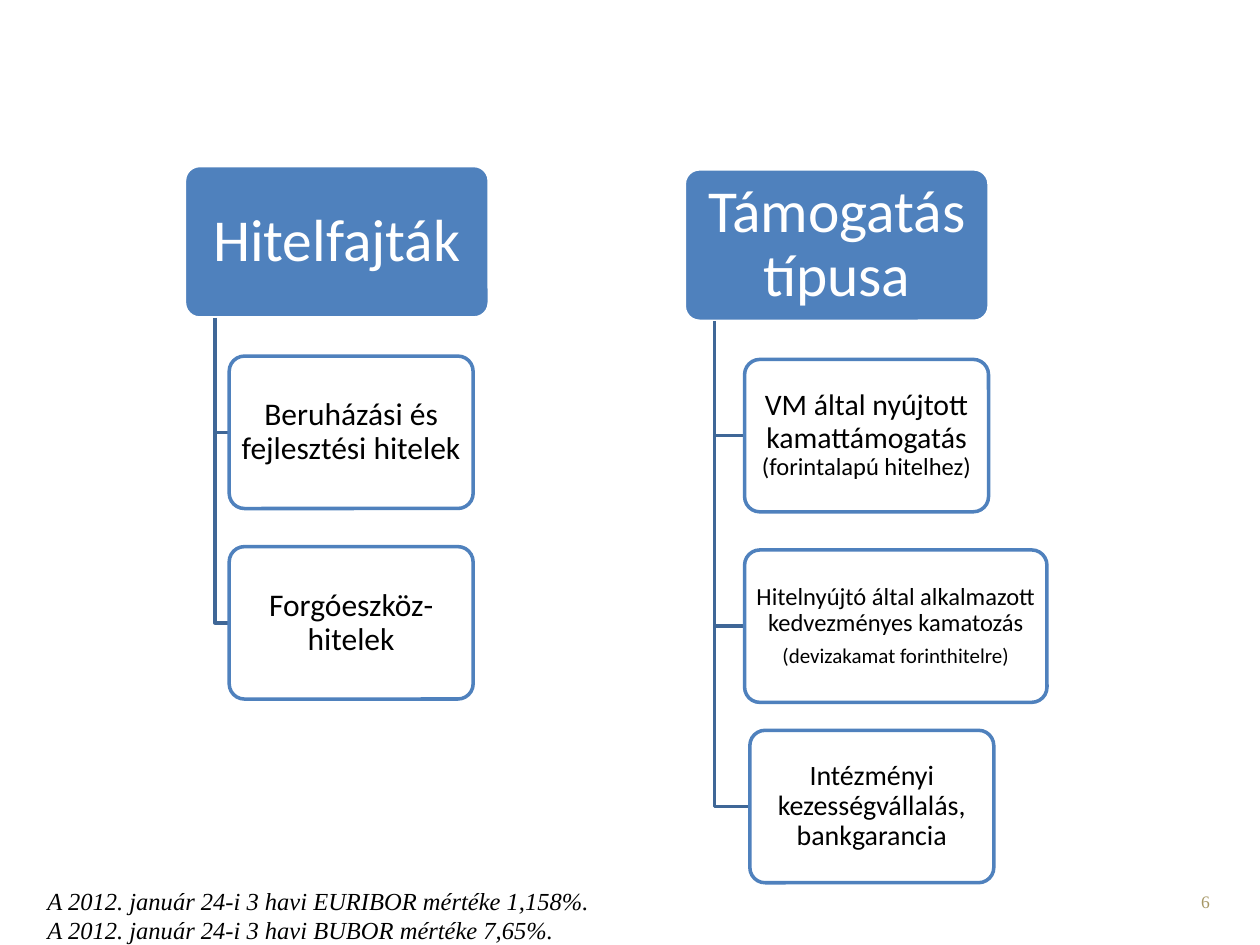
from pptx import Presentation
from pptx.dml.color import RGBColor
from pptx.enum.shapes import MSO_SHAPE
from pptx.enum.text import MSO_ANCHOR, PP_ALIGN
from pptx.util import Pt

ROUNDED = MSO_SHAPE.ROUNDED_RECTANGLE
MIDDLE = MSO_ANCHOR.MIDDLE
LEFT, CENTER, RIGHT = PP_ALIGN.LEFT, PP_ALIGN.CENTER, PP_ALIGN.RIGHT
COLORS = {"blue": "4F81BD", "connector": "3F6797", "white": "FFFFFF",
          "black": "000000", "number": "A69765"}
BOX_HEIGHT = 87.1
ROW_PITCH = BOX_HEIGHT * 1.25
HEAD_WIDTH = 174.2
CHILD_WIDTH = 139.4


def color(name):
    """Return the named colour."""
    return RGBColor.from_string(COLORS[name])


def write_text(shape, paragraphs, font="Calibri", fill="black", align=CENTER,
               italic=False, line_spacing=None, gap=0):
    """Fill a shape with paragraphs, each a list of (text, size) runs."""
    frame = shape.text_frame
    frame.word_wrap = True
    for index, runs in enumerate(paragraphs):
        paragraph = frame.add_paragraph() if index else frame.paragraphs[0]
        paragraph.alignment = align
        if line_spacing:
            paragraph.line_spacing = line_spacing
        if index < len(paragraphs) - 1:
            paragraph.space_after = Pt(gap)
        for text, size in runs:
            run = paragraph.add_run()
            run.text = text
            run.font.name = font
            run.font.size = Pt(size)
            run.font.italic = italic
            run.font.color.rgb = color(fill)


def add_box(slide, left, top, width, paragraphs, fill, line, text_color, margin):
    """Add one rounded box with centred text."""
    shape = slide.shapes.add_shape(ROUNDED, Pt(left), Pt(top), Pt(width), Pt(BOX_HEIGHT))
    shape.shadow.inherit = False
    shape.adjustments[0] = 0.1
    shape.fill.solid()
    shape.fill.fore_color.rgb = color(fill)
    shape.line.color.rgb = color(line)
    shape.line.width = Pt(2)
    frame = shape.text_frame
    frame.vertical_anchor = MIDDLE
    frame.margin_left = frame.margin_right = Pt(margin)
    frame.margin_top = frame.margin_bottom = Pt(margin / 2)
    write_text(shape, paragraphs, fill=text_color, line_spacing=0.9, gap=5)


def add_elbow(slide, left, top, right, bottom):
    """Add an open line that runs down and then right."""
    builder = slide.shapes.build_freeform(Pt(left), Pt(top))
    builder.add_line_segments([(Pt(left), Pt(bottom)), (Pt(right), Pt(bottom))], close=False)
    elbow = builder.convert_to_shape()
    elbow.shadow.inherit = False
    elbow.fill.background()
    elbow.line.color.rgb = color("connector")
    elbow.line.width = Pt(2)


def add_hierarchy(slide, left, top, heading, indent, children):
    """Add a heading box with child boxes (text, width, shift right, shift down) below."""
    add_box(slide, left, top, HEAD_WIDTH, [[(heading, 34)]], "blue", "white", "white", 5)
    trunk = left + HEAD_WIDTH / 10
    for row, (paragraphs, width, shift_x, shift_y) in enumerate(children, 1):
        child_left = left + indent + shift_x
        child_top = top + row * ROW_PITCH + shift_y
        add_elbow(slide, trunk, top + BOX_HEIGHT, child_left, child_top + BOX_HEIGHT / 2)
        add_box(slide, child_left, child_top, width, paragraphs, "white", "blue", "black", 2)


def add_note(slide, left, top, width, height, paragraphs, **text_format):
    """Add a serif text box."""
    box = slide.shapes.add_textbox(Pt(left), Pt(top), Pt(width), Pt(height))
    write_text(box, paragraphs, font="Times New Roman", **text_format)


def main():
    """Build and save the slide."""
    presentation = Presentation()
    presentation.slide_width, presentation.slide_height = Pt(720), Pt(540)
    slide = presentation.slides.add_slide(presentation.slide_layouts[6])
    add_hierarchy(slide, 105.4, 94.6, "Hitelfajták", 25.6, [
        ([[("Beruházási és fejlesztési hitelek", 18)]], CHILD_WIDTH, 0, 0),
        ([[("Forgóeszköz-hitelek", 18)]], CHILD_WIDTH, 0, 0),
    ])
    add_hierarchy(slide, 391, 96.5, "Támogatás típusa", 34.5, [
        ([[("VM által nyújtott kamattámogatás", 17), (" (forintalapú hitelhez)", 14)]],
         CHILD_WIDTH, 0, 0),
        ([[("Hitelnyújtó által alkalmazott kedvezményes kamatozás", 14)],
          [("(devizakamat forinthitelre)", 12)]], 172.8, 0, 0),
        ([[("Intézményi kezességvállalás, bankgarancia", 16)]], CHILD_WIDTH, 3, -5.8),
    ])
    add_note(slide, 20, 502.5, 444, 58, [
        [("A 2012. január 24-i 3 havi EURIBOR mértéke 1,158%.", 14)],
        [("A 2012. január 24-i 3 havi BUBOR mértéke 7,65%.", 14)],
    ], align=LEFT, italic=True)
    add_note(slide, 530.6, 505.4, 167.8, 28.8, [[("6", 10)]], fill="number", align=RIGHT)
    presentation.save("out.pptx")


if __name__ == "__main__":
    main()
